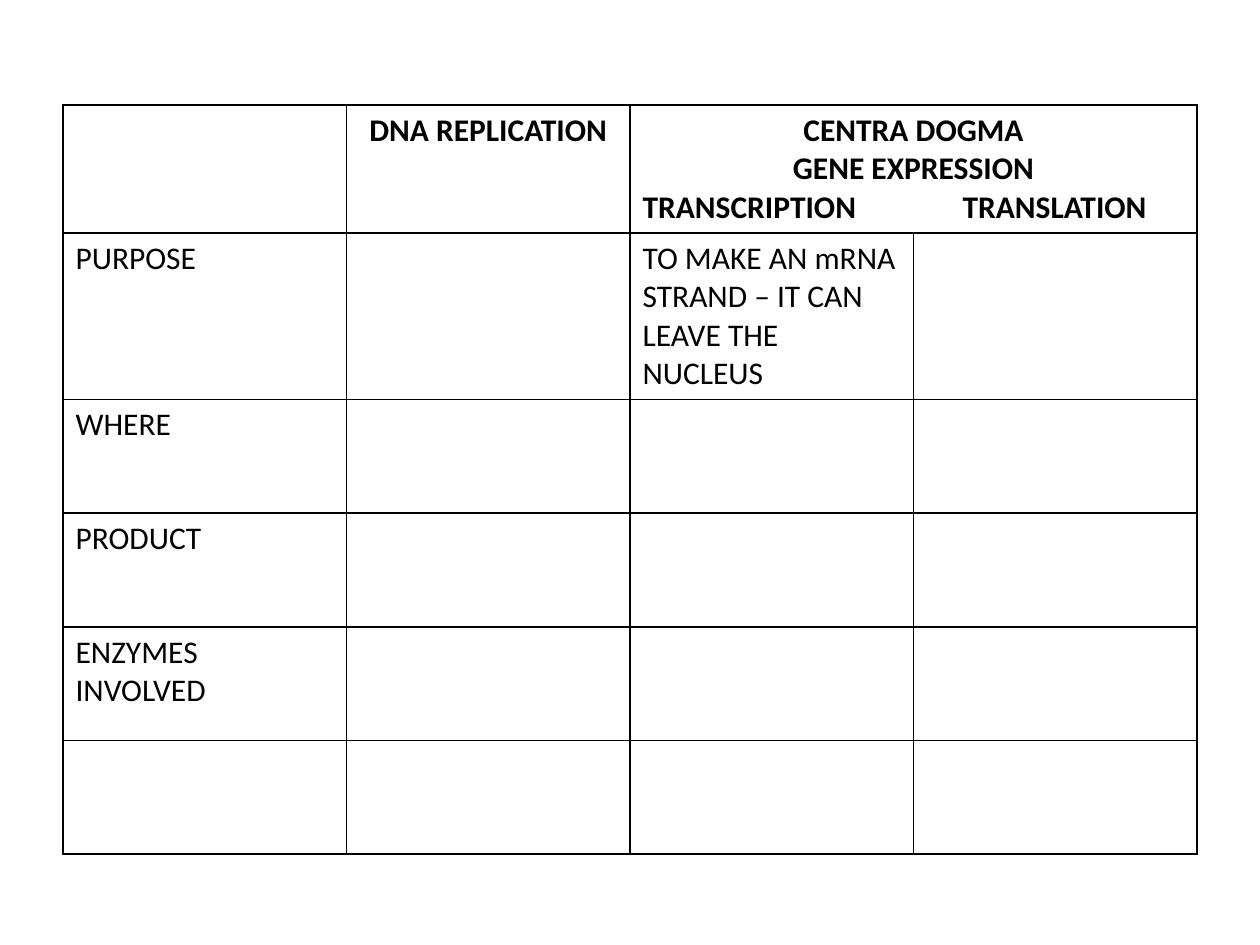
from lxml.etree import SubElement
from pptx import Presentation
from pptx.dml.color import RGBColor
from pptx.enum.text import PP_ALIGN as Align
from pptx.oxml.ns import qn
from pptx.util import Cm, Pt

COLORS = {"ink": "000000", "paper": "FFFFFF"}
FONT = "Calibri"
ROW_LABELS = ["PURPOSE", "WHERE", "PRODUCT", "ENZYMES INVOLVED", ""]
COLUMNS = 4


def style_cell(cell):
    tcPr = cell._tc.get_or_add_tcPr()
    for side in ("lnL", "lnR", "lnT", "lnB"):
        ln = SubElement(tcPr, qn(f"a:{side}"), w=str(Pt(1)))
        fill = SubElement(ln, qn("a:solidFill"))
        SubElement(fill, qn("a:srgbClr"), val=COLORS["ink"])
    cell.fill.solid()
    cell.fill.fore_color.rgb = RGBColor.from_string(COLORS["paper"])


def write(p, text, bold=False, align=Align.LEFT):
    p.alignment = align
    r = p.add_run()
    r.text = text
    r.font.name = FONT
    r.font.size = Pt(18)
    r.font.bold = bold
    r.font.color.rgb = RGBColor.from_string(COLORS["ink"])


def add_tab_stop(p, position):
    tabs = SubElement(p._p.get_or_add_pPr(), qn("a:tabLst"))
    SubElement(tabs, qn("a:tab"), pos=str(position), algn="l")


def fill_header(table):
    write(table.cell(0, 1).text_frame.paragraphs[0], "DNA REPLICATION", True, Align.CENTER)
    expression = table.cell(0, 2)
    expression.merge(table.cell(0, 3))
    tf = expression.text_frame
    write(tf.paragraphs[0], "CENTRA DOGMA", True, Align.CENTER)
    write(tf.add_paragraph(), "GENE EXPRESSION", True, Align.CENTER)
    steps = tf.add_paragraph()
    write(steps, "TRANSCRIPTION\tTRANSLATION", True)
    add_tab_stop(steps, Cm(6.45))


def add_comparison_table(slide, left, top, width, height):
    rows = len(ROW_LABELS) + 1
    table = slide.shapes.add_table(rows, COLUMNS, left, top, width, height).table
    table.first_row = False
    table.horz_banding = False
    for cell in table.iter_cells():
        style_cell(cell)
    fill_header(table)
    for row, label in enumerate(ROW_LABELS, 1):
        if label:
            write(table.cell(row, 0).text_frame.paragraphs[0], label)
    write(table.cell(1, 2).text_frame.paragraphs[0],
          "TO MAKE AN mRNA STRAND – IT CAN LEAVE THE NUCLEUS")


def main():
    prs = Presentation()
    prs.slide_width, prs.slide_height = Cm(25.4), Cm(19.05)
    slide = prs.slides.add_slide(prs.slide_layouts[6])
    add_comparison_table(slide, Cm(1.27), Cm(2.12), Cm(22.86), Cm(13.74))
    prs.save("out.pptx")


if __name__ == "__main__":
    main()
